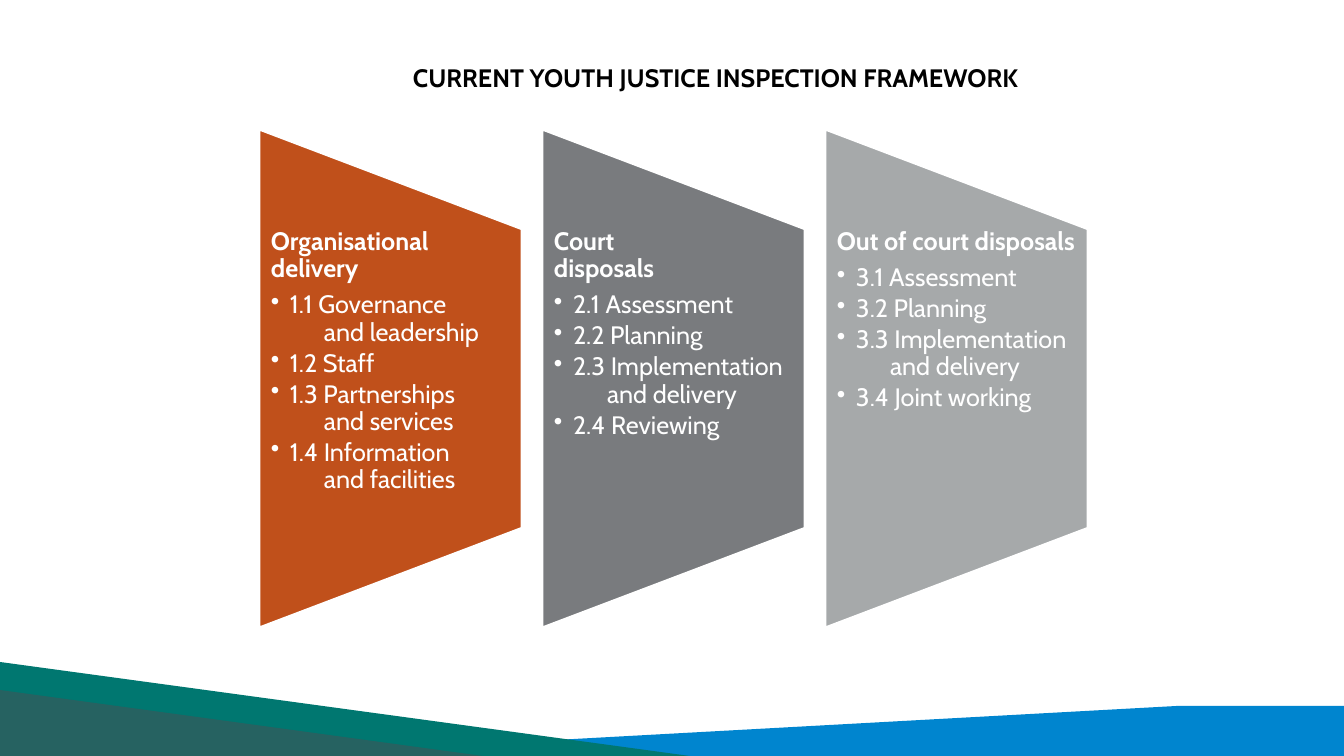
from pptx import Presentation
from pptx.dml.color import RGBColor
from pptx.enum.shapes import MSO_SHAPE as SHAPE
from pptx.enum.text import MSO_ANCHOR as ANCHOR
from pptx.oxml.ns import qn
from pptx.util import Emu, Pt
from lxml.etree import SubElement

PX = 914400 / 100.8
COLUMN_PITCH = 283
BULLET_INDENT = 19
CONTINUATION_INDENT = 53

COLUMNS = [
    ("C0501B", "Organisational delivery",
     ["1.1 Governance\nand leadership", "1.2 Staff",
      "1.3 Partnerships\nand services", "1.4 Information\nand facilities"]),
    ("797B7E", "Court\vdisposals",
     ["2.1 Assessment", "2.2 Planning",
      "2.3 Implementation\nand delivery", "2.4 Reviewing"]),
    ("A6A9AA", "Out of court disposals",
     ["3.1 Assessment", "3.2 Planning",
      "3.3 Implementation\nand delivery", "3.4 Joint working"]),
]


def px(n):
    return Emu(round(n * PX))


def rgb(color):
    return RGBColor.from_string(color)


def paint(sp, fill, line=None, alpha=None):
    sp.shadow.inherit = False
    sp.fill.solid()
    sp.fill.fore_color.rgb = rgb(fill)
    if alpha is not None:
        clr = sp.fill._xPr.find(qn("a:solidFill"))[0]
        SubElement(clr, qn("a:alpha")).set("val", str(alpha * 1000))
    if line:
        sp.line.color.rgb = rgb(line)
        sp.line.width = Pt(2)
    else:
        sp.line.fill.background()


def add_preset(s, kind, box, fill, line=None, alpha=None, rotation=0):
    sp = s.shapes.add_shape(kind, *map(px, box))
    sp.rotation = rotation
    paint(sp, fill, line, alpha)


def add_outline(s, points, fill):
    fb = s.shapes.build_freeform(*points[0], scale=PX)
    fb.add_line_segments(points[1:], close=True)
    paint(fb.convert_to_shape(), fill)


def add_box(s, box, left=10, top=5, right=10, bottom=5, anchor=ANCHOR.TOP):
    tf = s.shapes.add_textbox(*map(px, box)).text_frame
    tf.word_wrap = True
    tf.vertical_anchor = anchor
    tf.margin_left, tf.margin_top = px(left), px(top)
    tf.margin_right, tf.margin_bottom = px(right), px(bottom)
    return tf


def write(tf, text, color="FFFFFF", bold=False, bullet=False, indent=0,
          spacing=0.9, after=0):
    p = tf.paragraphs[0] if not tf.text else tf.add_paragraph()
    pPr = p._p.get_or_add_pPr()
    pPr.set("marL", str(px(indent)))
    pPr.set("indent", str(px(-indent if bullet else 0)))
    if bullet:
        SubElement(pPr, qn("a:buChar")).set("char", "•")
    else:
        SubElement(pPr, qn("a:buNone"))
    p.line_spacing = spacing
    p.space_after = Pt(after)
    p.text = text
    for r in p.runs:
        r.font.name = "Cabin"
        r.font.size = Pt(18)
        r.font.bold = bold
        r.font.color.rgb = rgb(color)


def add_item(tf, item):
    first, *rest = item.split("\n")
    write(tf, first, bullet=True, indent=BULLET_INDENT,
          after=0 if rest else 2.7)
    for line in rest:
        write(tf, line, indent=CONTINUATION_INDENT, after=2.7)


def add_column(s, index, fill, heading, items):
    x = index * COLUMN_PITCH
    add_preset(s, SHAPE.FLOWCHART_MANUAL_OPERATION, (141 + x, 247, 499, 263),
               fill, line="FFFFFF", rotation=270)
    tf = add_box(s, (259 + x, 229, 263, 299), 12, 0, 8, 0)
    write(tf, heading, bold=True, after=6.3)
    for item in items:
        add_item(tf, item)


def add_footer(s):
    add_outline(s, [(264, 756), (1177, 706), (1344, 706), (1344, 756)], "0085CF")
    add_preset(s, SHAPE.RIGHT_TRIANGLE, (0, 662, 690, 94), "007770")
    add_preset(s, SHAPE.RIGHT_TRIANGLE, (0, 690, 483, 66), "4D4E53", alpha=50)


def main():
    prs = Presentation()
    prs.slide_width, prs.slide_height = px(1344), px(756)
    s = prs.slides.add_slide(prs.slide_layouts[6])
    add_footer(s)
    title = add_box(s, (403, 47, 707, 61), anchor=ANCHOR.MIDDLE)
    write(title, "CURRENT YOUTH JUSTICE INSPECTION FRAMEWORK",
          color="000000", bold=True, spacing=1.0)
    for i, column in enumerate(COLUMNS):
        add_column(s, i, *column)
    prs.save("out.pptx")


if __name__ == "__main__":
    main()
